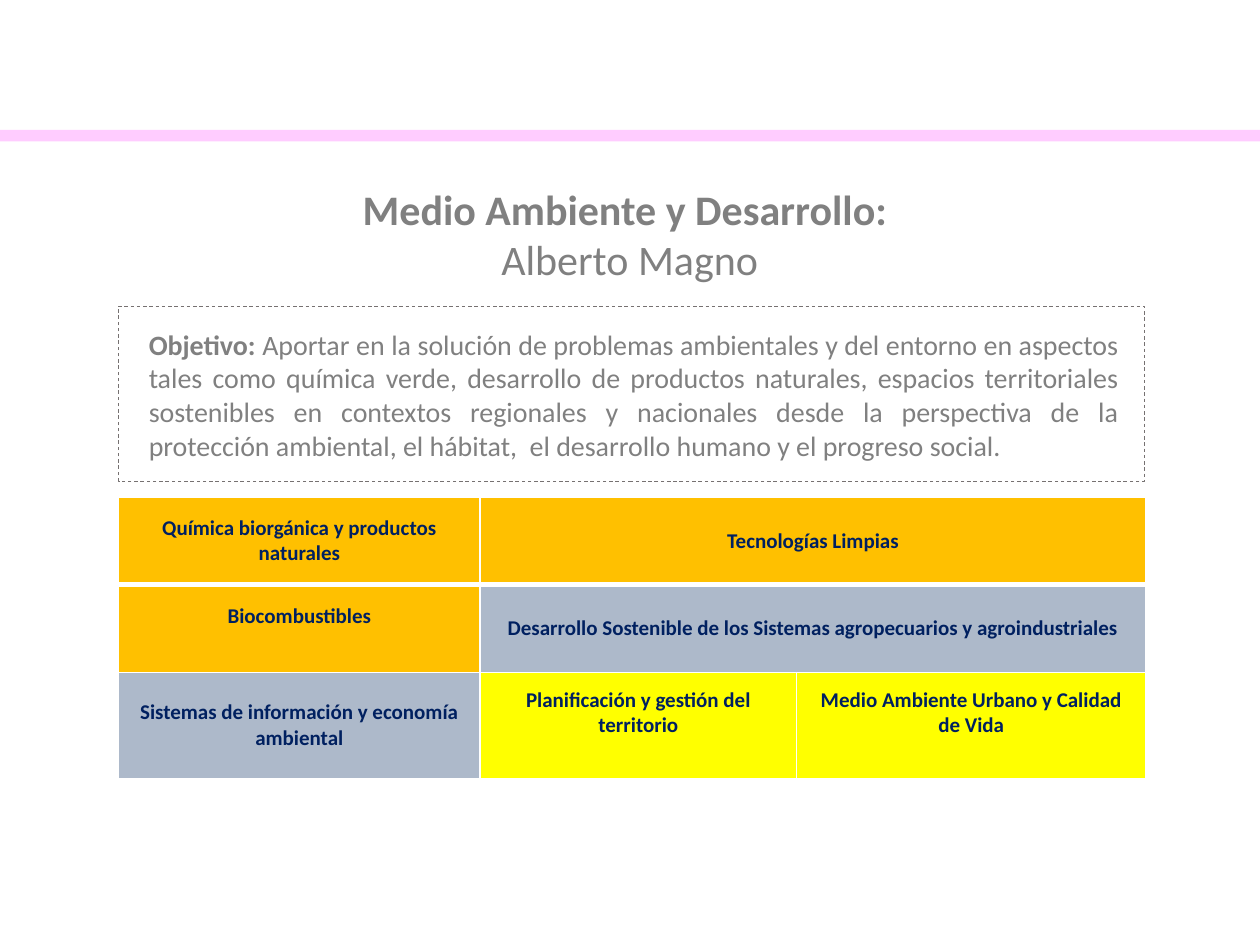
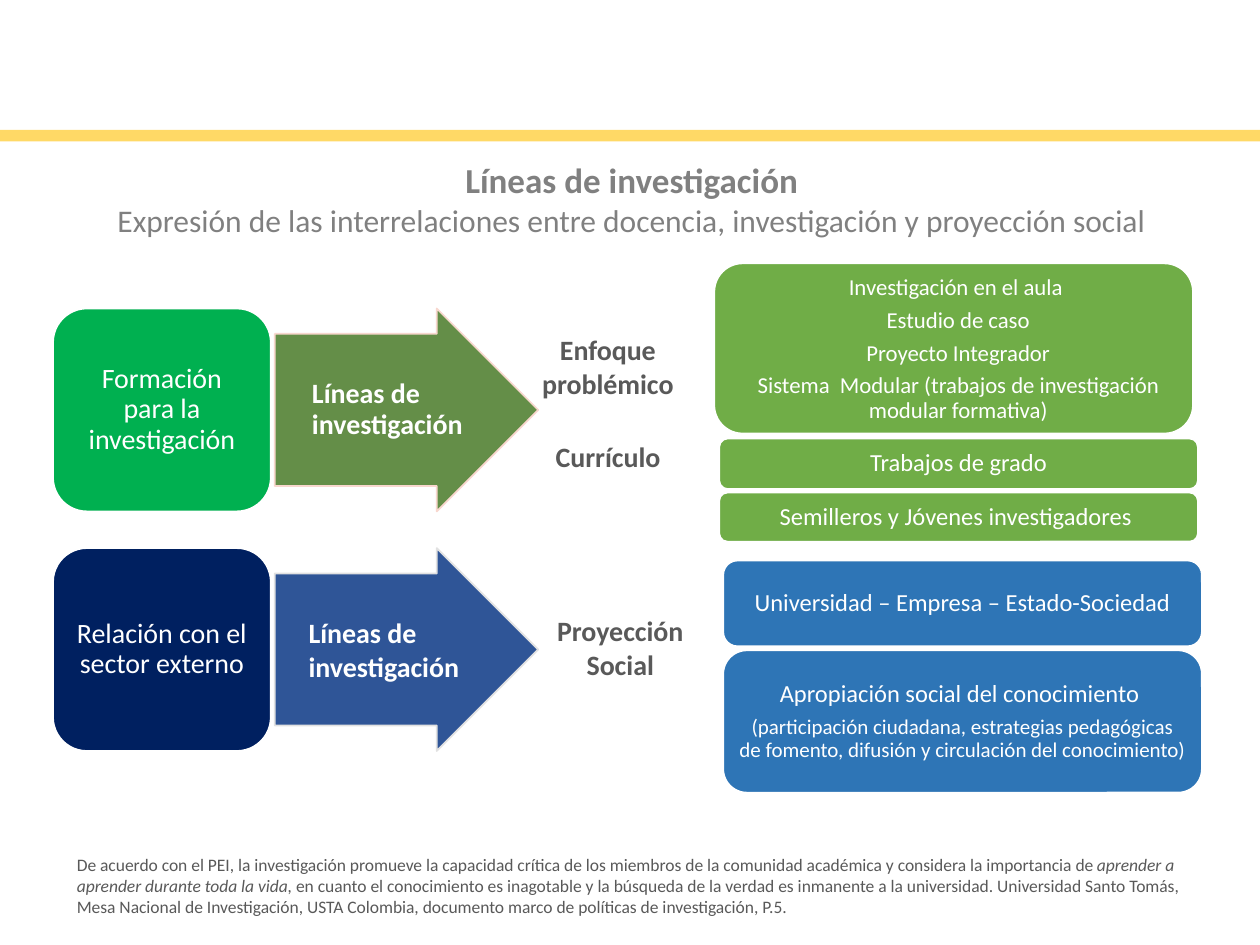
from dataclasses import dataclass

from lxml import etree
from pptx import Presentation
from pptx.dml.color import RGBColor
from pptx.enum.dml import MSO_LINE
from pptx.enum.shapes import MSO_SHAPE
from pptx.enum.text import MSO_ANCHOR, PP_ALIGN
from pptx.oxml.ns import qn
from pptx.util import Cm, Pt

LEFT, CENTER, JUSTIFY = PP_ALIGN.LEFT, PP_ALIGN.CENTER, PP_ALIGN.JUSTIFY
TOP, MIDDLE = MSO_ANCHOR.TOP, MSO_ANCHOR.MIDDLE
RECT, ROUNDED = MSO_SHAPE.RECTANGLE, MSO_SHAPE.ROUNDED_RECTANGLE
ARROW = MSO_SHAPE.RIGHT_ARROW
DASH = MSO_LINE.DASH


@dataclass(frozen=True)
class Theme:
    font: str = "Calibri"
    white: str = "FFFFFF"
    title: str = "808080"
    label: str = "595959"
    frame: str = "767171"
    navy: str = "002060"
    pink: str = "FFCCFF"
    gold: str = "FFD966"
    amber: str = "FFC000"
    steel: str = "ADB9CA"
    yellow: str = "FFFF00"
    green: str = "00B050"
    leaf: str = "70AD47"
    moss: str = "548235"
    moss_line: str = "F8D7CE"
    blue: str = "2E75B6"
    royal: str = "2F5597"
    royal_line: str = "E1E1E1"
    heading_size: int = 24
    title_size: int = 20
    subtitle_size: int = 18
    body_size: int = 16
    box_size: int = 14
    list_size: int = 13
    small_size: int = 12
    note_size: int = 10


T = Theme()
TEXT_MARGINS = (0.25, 0.13, 0.25, 0.13)
CARD_MARGINS = (0.18, 0.18, 0.18, 0.18)
LIST_MARGINS = (0.36, 0.18, 0.18, 0.13)


def rgb(color):
    return RGBColor.from_string(color)


def set_text(tf, paragraphs, size=T.body_size, color=T.white, bold=False,
             align=CENTER, anchor=TOP, margins=TEXT_MARGINS, spacing=1.0,
             after=0):
    """Each paragraph is a string or a list of (text, run overrides);
    after is the space below it as a share of the type size."""
    tf.word_wrap = True
    tf.vertical_anchor = anchor
    (tf.margin_left, tf.margin_top,
     tf.margin_right, tf.margin_bottom) = map(Cm, margins)
    for i, runs in enumerate(paragraphs):
        p = tf.paragraphs[0] if i == 0 else tf.add_paragraph()
        p.alignment = align
        p.line_spacing = spacing
        p.space_after = Pt(size * after)
        for text, own in [(runs, {})] if isinstance(runs, str) else runs:
            r = p.add_run()
            r.text = text
            r.font.name = T.font
            r.font.size = Pt(own.get("size", size))
            r.font.bold = own.get("bold", bold)
            r.font.italic = own.get("italic", False)
            r.font.color.rgb = rgb(color)


def add_shape(s, kind, box, fill=None, line=None, width=1, dash=None):
    sp = s.shapes.add_shape(kind, *map(Cm, box))
    sp.shadow.inherit = False
    if fill:
        sp.fill.solid()
        sp.fill.fore_color.rgb = rgb(fill)
    else:
        sp.fill.background()
    if line:
        sp.line.color.rgb = rgb(line)
        sp.line.width = Pt(width)
        if dash:
            sp.line.dash_style = dash
    else:
        sp.line.fill.background()
    return sp


def add_textbox(s, box, paragraphs, **fmt):
    set_text(s.shapes.add_textbox(*map(Cm, box)).text_frame, paragraphs, **fmt)


def add_card(s, box, fill, paragraphs, **fmt):
    sp = add_shape(s, ROUNDED, box, fill, T.white)
    set_text(sp.text_frame, paragraphs, anchor=MIDDLE, spacing=0.9,
             after=0.35, **fmt)


def add_arrow(s, top, fill, line, paragraphs, indent, spacing, alpha=100):
    """Arrow with its label in a text box, which may reach into the head."""
    left, width, height = 5.54, 5.31, 4.09
    sp = add_shape(s, ARROW, (left, top, width, height), fill, line)
    sp.adjustments[0], sp.adjustments[1] = 0.75, 0.5
    if alpha < 100:
        color = sp._element.spPr.find(qn("a:solidFill"))[0]
        etree.SubElement(color, qn("a:alpha"), val=str(alpha * 1000))
    add_textbox(s, (left + indent, top, 4, height), paragraphs, bold=True,
                align=LEFT, anchor=MIDDLE, margins=(0, 0, 0, 0),
                spacing=spacing)


def set_borders(cell, **widths):
    tc_pr = cell._tc.get_or_add_tcPr()
    for side in "LRTB":
        ln = etree.SubElement(tc_pr, qn("a:ln" + side),
                              w=str(Pt(widths.get(side, 1))))
        fill = etree.SubElement(ln, qn("a:solidFill"))
        etree.SubElement(fill, qn("a:srgbClr"), val=T.white)


def add_lines_table(s):
    """Table of research lines; raised text sits above the cell's middle."""
    cols, rows = (7.29, 6.38, 7.04), (1.75, 1.78, 2.13)
    raised = (0.25, 0.13, 0.25, 0.64)
    cells = [
        (0, 0, "Química biorgánica y productos naturales", T.amber, TEXT_MARGINS),
        (0, 1, "Tecnologías Limpias", T.amber, TEXT_MARGINS),
        (1, 0, "Biocombustibles", T.amber, raised),
        (1, 1, "Desarrollo Sostenible de los Sistemas agropecuarios y "
               "agroindustriales", T.steel, TEXT_MARGINS),
        (2, 0, "Sistemas de información y economía ambiental", T.steel,
         TEXT_MARGINS),
        (2, 1, "Planificación y gestión del territorio", T.yellow, raised),
        (2, 2, "Medio Ambiente Urbano y Calidad de Vida", T.yellow, raised),
    ]
    table = s.shapes.add_table(len(rows), len(cols), Cm(2.39), Cm(10.03),
                               Cm(sum(cols)), Cm(sum(rows))).table
    table.first_row = table.horz_banding = False
    for column, width in zip(table.columns, cols):
        column.width = Cm(width)
    for row, height in zip(table.rows, rows):
        row.height = Cm(height)
    thick = {0: {"B": 3}, 1: {"T": 3}}
    for i, row in enumerate(table.rows):
        for cell in row.cells:
            set_borders(cell, **thick.get(i, {}))
    for i in (0, 1):
        table.cell(i, 1).merge(table.cell(i, 2))
    for i, j, text, fill, margins in cells:
        cell = table.cell(i, j)
        cell.fill.solid()
        cell.fill.fore_color.rgb = rgb(fill)
        set_text(cell.text_frame, [text], size=T.small_size, color=T.navy,
                 bold=True)
        cell.vertical_anchor = MIDDLE
        (cell.margin_left, cell.margin_top,
         cell.margin_right, cell.margin_bottom) = map(Cm, margins)


def add_slide(prs, band, title_box, title, subtitle, size, subtitle_size):
    s = prs.slides.add_slide(prs.slide_layouts[6])
    add_shape(s, RECT, (0, 2.62, 25.4, 0.23), band)
    add_textbox(s, title_box,
                [[(title, {"bold": True})],
                 [(subtitle, {"size": subtitle_size})]],
                size=size, color=T.title)
    return s


def build_environment(prs):
    s = add_slide(prs, T.pink, (3.12, 3.56, 19.15, 2.31),
                  "Medio Ambiente y Desarrollo: ", "Alberto Magno",
                  T.heading_size, T.heading_size)
    frame = add_shape(s, RECT, (2.39, 6.17, 20.68, 3.53), line=T.frame,
                      width=0.5, dash=DASH)
    goal = ("Aportar en la solución de problemas ambientales y del entorno en "
            "aspectos tales como química verde, desarrollo de productos "
            "naturales, espacios territoriales sostenibles en contextos "
            "regionales y nacionales desde la perspectiva de la protección "
            "ambiental, el hábitat,  el desarrollo humano y el progreso social.")
    set_text(frame.text_frame, [[("Objetivo: ", {"bold": True}), (goal, {})]],
             color=T.title, align=JUSTIFY, margins=(0.61, 0.43, 0.51, 0.13))
    add_lines_table(s)


def build_research_lines(prs):
    s = add_slide(prs, T.gold, (1.98, 3.07, 21.51, 1.88),
                  "Líneas de investigación",
                  "Expresión de las interrelaciones entre docencia, "
                  "investigación y proyección social",
                  T.title_size, T.subtitle_size)

    training_top, outreach_top = 6.22, 11.05
    add_arrow(s, training_top, T.moss, T.moss_line,
              ["Líneas de investigación"], 0.75, 0.9, alpha=90)
    add_arrow(s, outreach_top, T.royal, T.royal_line,
              ["Líneas de", "investigación"], 0.68, 1.0)
    for top, fill, text in [
        (training_top, T.green, "Formación para la investigación"),
        (outreach_top, T.navy, "Relación con el sector externo"),
    ]:
        add_card(s, (1.07, top, 4.39, 4.09), fill, [text],
                 margins=(0.25, 0.1, 0.25, 0.1))

    for box, text, align in [
        ((10.06, 6.58, 4.39, 1.63), "Enfoque problémico", CENTER),
        ((10.95, 8.74, 3.1, 0.94), "Currículo", LEFT),
        ((10.74, 12.24, 3.53, 1.63), "Proyección Social", CENTER),
    ]:
        add_textbox(s, box, [text], color=T.label, bold=True, align=align)

    detail = ("(participación ciudadana, estrategias pedagógicas de fomento, "
              "difusión y circulación del conocimiento)")
    add_card(s, (14.4, 5.31, 9.65, 3.43), T.leaf,
             ["Investigación en el aula ", "Estudio de caso",
              "Proyecto Integrador",
              "Sistema  Modular (trabajos de investigación modular formativa)"],
             size=T.list_size, margins=LIST_MARGINS)
    for left, top, height, fill, paragraphs in [
        (14.5, 8.84, 1.02, T.leaf, ["Trabajos de grado"]),
        (14.5, 9.93, 0.99, T.leaf, ["Semilleros y Jóvenes investigadores "]),
        (14.58, 11.3, 1.73, T.blue,
         ["Universidad – Empresa – Estado-Sociedad"]),
        (14.58, 13.11, 2.87, T.blue,
         ["Apropiación social del conocimiento ",
          [(detail, {"size": T.small_size})]]),
    ]:
        add_card(s, (left, top, 9.65, height), fill, paragraphs,
                 size=T.box_size, margins=CARD_MARGINS)

    add_textbox(s, (1.3, 17.09, 23.14, 1.55), [[
        ("De acuerdo con el PEI, la investigación promueve la capacidad crítica "
         "de los miembros de la comunidad académica y considera la importancia "
         "de ", {}),
        ("aprender a aprender durante toda la vida, ", {"italic": True}),
        ("en cuanto el conocimiento es inagotable y la búsqueda de la verdad es "
         "inmanente a la universidad. Universidad Santo Tomás, Mesa Nacional de "
         "Investigación, USTA Colombia, documento marco de políticas de "
         "investigación, P.5.", {}),
    ]], size=T.note_size, color=T.label, align=LEFT)


def main():
    prs = Presentation()
    prs.slide_width, prs.slide_height = Cm(25.4), Cm(19.05)
    build_environment(prs)
    build_research_lines(prs)
    prs.save("out.pptx")


if __name__ == "__main__":
    main()
